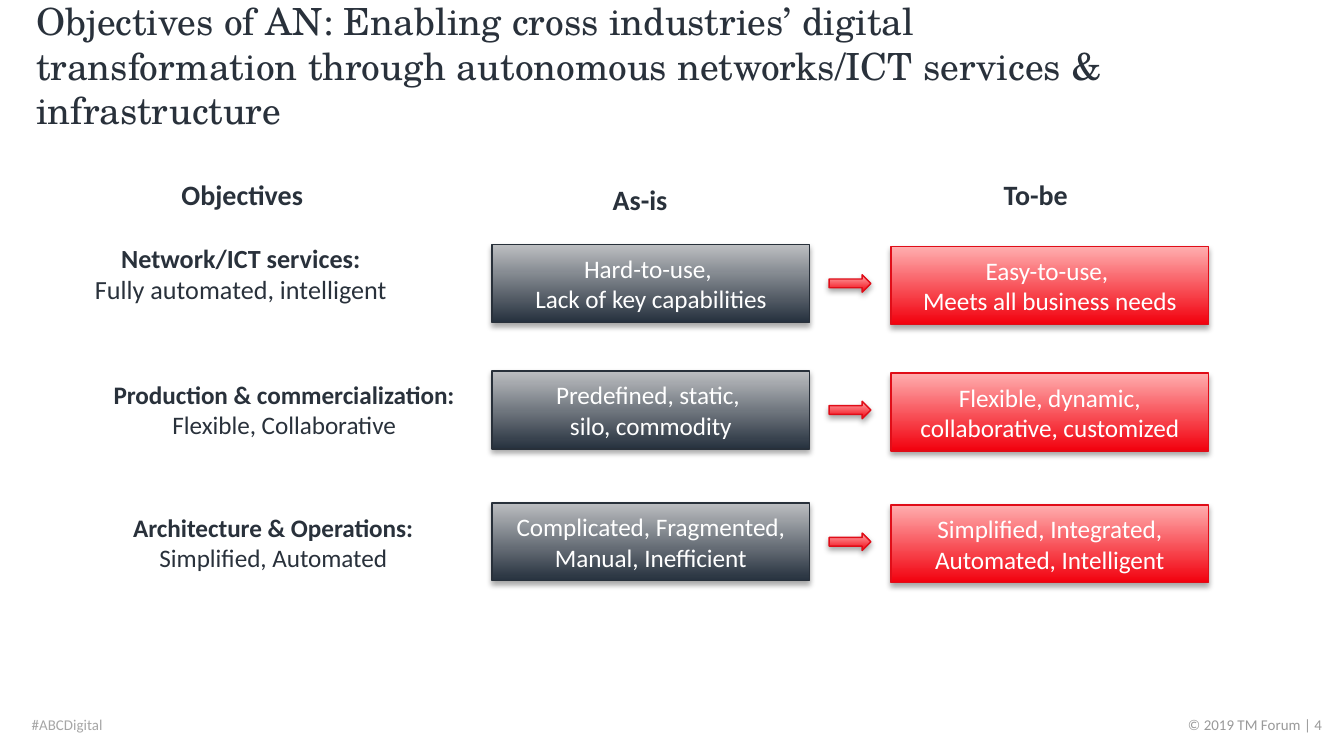
from lxml.etree import SubElement
from pptx import Presentation
from pptx.dml.color import RGBColor
from pptx.enum.shapes import MSO_SHAPE
from pptx.enum.text import MSO_ANCHOR, MSO_AUTO_SIZE, PP_ALIGN
from pptx.oxml.ns import qn
from pptx.util import Cm, Pt

TITLE = ("Objectives of AN: Enabling cross industries’ digital transformation "
         "through autonomous networks/ICT services & infrastructure")
HEADINGS = [
    ("Objectives", 3.18, 3.23, 2.84),
    ("As-is", 11.33, 3.33, 1.55),
    ("To-be", 18.72, 3.23, 1.73),
]
OBJECTIVES = [
    (["Network/ICT services: ", "Fully automated, intelligent "], 0.43, 4.45, 8.36, 14),
    (["Production & commercialization:", "Flexible, Collaborative"], 1.19, 7.04, 8.36, 13.5),
    (["Architecture & Operations:", "Simplified, Automated"], 1.7, 9.55, 6.93, 13.5),
]
ROWS = [
    (4.62, ["Hard-to-use, ", "Lack of key capabilities"],
     ["Easy-to-use, ", "Meets all business needs"]),
    (7.01, ["Predefined, static, ", "silo, commodity"],
     ["Flexible, dynamic, collaborative, customized"]),
    (9.5, ["Complicated, Fragmented, Manual, Inefficient"],
     ["Simplified, Integrated, Automated, Intelligent"]),
]
FOOTERS = [
    ("© 2019 TM Forum | 4", 19.48, "999999", PP_ALIGN.RIGHT),
    ("#ABCDigital", 0.43, "A6A6A6", PP_ALIGN.LEFT),
]
INK, WHITE = "29313B", "FFFFFF"
GREY = ("26313E", "BCBEC1", "28303A")
RED = ("F2000D", "FFAEAF", "E00D18")
BOX_W, BOX_H = 6, 1.47
AS_IS_X, ARROW_X, TO_BE_X = 9.3, 15.67, 16.84
TO_BE_DROP = 0.04
ARROW_W, ARROW_H = 0.79, 0.33


def rgb(value):
    return RGBColor.from_string(value)


def write(sp, lines, size=13.5, color=INK, font="Calibri", bold_lines=0,
          align=PP_ALIGN.CENTER, anchor=MSO_ANCHOR.TOP, wrap=True):
    tf = sp.text_frame
    tf.word_wrap = wrap
    tf.auto_size = MSO_AUTO_SIZE.NONE
    tf.vertical_anchor = anchor
    for i, line in enumerate(lines):
        p = tf.add_paragraph() if i else tf.paragraphs[0]
        p.alignment = align
        r = p.add_run()
        r.text = line
        r.font.name = font
        r.font.size = Pt(size)
        r.font.bold = i < bold_lines
        r.font.color.rgb = rgb(color)
    return tf


def add_text(s, lines, x, y, w, h, **fmt):
    sp = s.shapes.add_textbox(Cm(x), Cm(y), Cm(w), Cm(h))
    return write(sp, lines, **fmt)


def add_glossy(s, kind, x, y, w, h, colors):
    bottom, top, edge = colors
    sp = s.shapes.add_shape(kind, Cm(x), Cm(y), Cm(w), Cm(h))
    sp.fill.gradient()
    sp.fill.gradient_angle = 90
    for stop, color in zip(sp.fill.gradient_stops, (bottom, top)):
        stop.color.rgb = rgb(color)
    sp.line.color.rgb = rgb(edge)
    sp.line.width = Pt(0.75)
    sp.shadow.inherit = False
    effects = sp._element.spPr.find(qn("a:effectLst"))
    shadow = SubElement(effects, qn("a:outerShdw"), blurRad=str(Pt(3.1)),
                        dist=str(Pt(1.8)), dir="5400000", rotWithShape="0")
    black = SubElement(shadow, qn("a:srgbClr"), val="000000")
    SubElement(black, qn("a:alpha"), val="35000")
    return sp


def add_box(s, lines, x, y, colors):
    sp = add_glossy(s, MSO_SHAPE.RECTANGLE, x, y, BOX_W, BOX_H, colors)
    write(sp, lines, color=WHITE, anchor=MSO_ANCHOR.MIDDLE)


def main():
    prs = Presentation()
    prs.slide_width, prs.slide_height = Cm(25.4), Cm(14.28)
    s = prs.slides.add_slide(prs.slide_layouts[5])

    title = s.shapes.title
    title.left, title.top, title.width, title.height = Cm(0.43), Cm(0.25), Cm(21.39), Cm(1.96)
    write(title, [TITLE], size=20, font="TeX Gyre Schola",
          align=PP_ALIGN.LEFT, anchor=MSO_ANCHOR.MIDDLE)

    for text, x, y, w in HEADINGS:
        add_text(s, [text], x, y, w, 0.89, size=15, bold_lines=1,
                 align=PP_ALIGN.LEFT, wrap=False)
    for lines, x, y, w, size in OBJECTIVES:
        add_text(s, lines, x, y, w, 1.43, size=size, bold_lines=1)

    for y, as_is, to_be in ROWS:
        add_box(s, as_is, AS_IS_X, y, GREY)
        add_box(s, to_be, TO_BE_X, y + TO_BE_DROP, RED)
        add_glossy(s, MSO_SHAPE.RIGHT_ARROW, ARROW_X, y + (BOX_H - ARROW_H) / 2,
                   ARROW_W, ARROW_H, RED)

    for text, x, color, align in FOOTERS:
        tf = add_text(s, [text], x, 13.49, 5.51, 0.38, size=8, color=color, align=align)
        tf.margin_left = Cm(0.17)
        tf.margin_right = tf.margin_bottom = 0
        tf.margin_top = Cm(0.03)

    prs.save("out.pptx")


if __name__ == "__main__":
    main()
